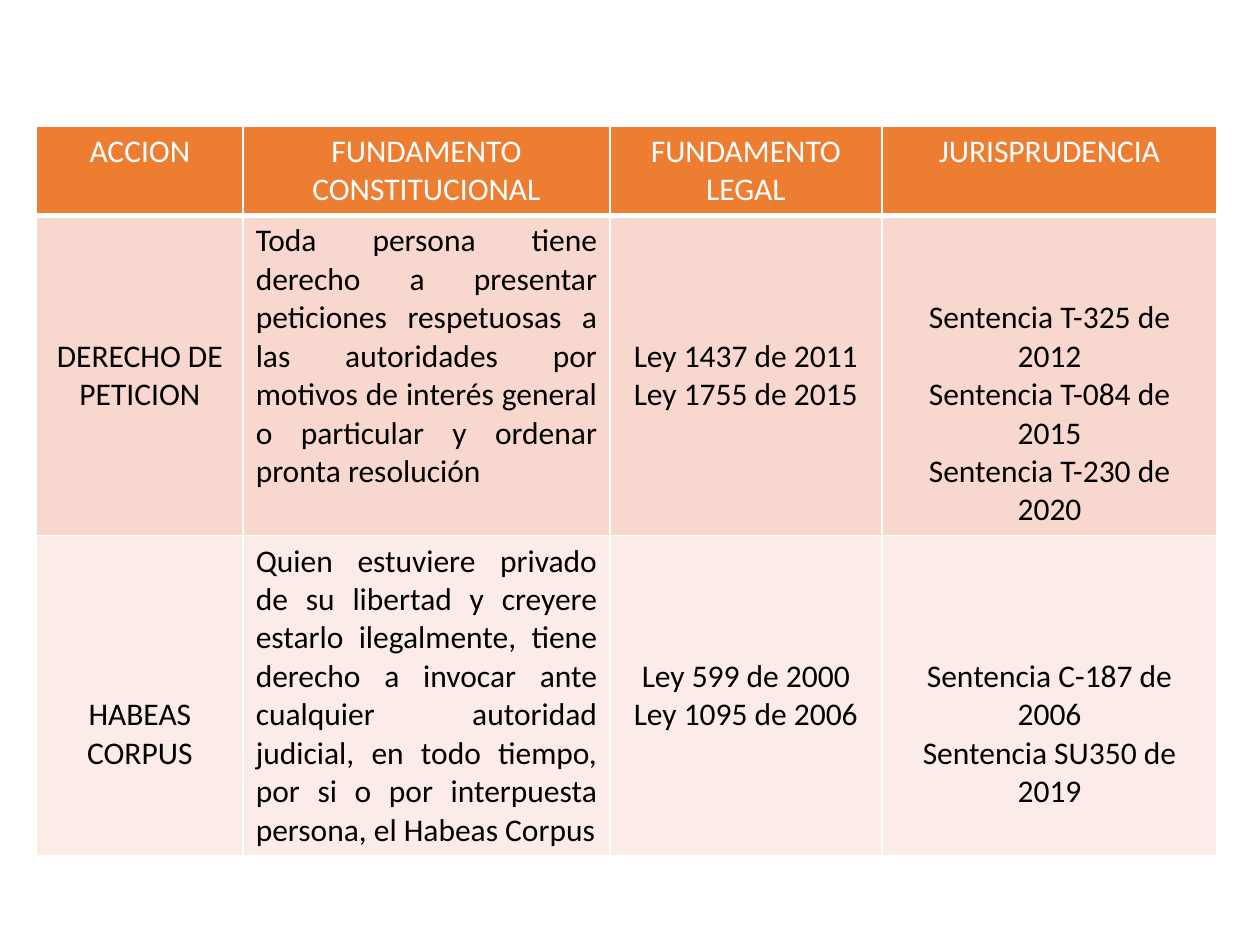
from lxml.etree import SubElement
from pptx import Presentation
from pptx.dml.color import RGBColor
from pptx.enum.text import MSO_ANCHOR, PP_ALIGN
from pptx.oxml.ns import qn
from pptx.util import Inches, Pt

THEME = {
    "font": "Calibri",
    "size": 18,
    "border": "FFFFFF",
    "header_text": "FFFFFF",
    "body_text": "000000",
    "row_fills": ["ED7D31", "F8D7CE", "FCECE8"],
}
SLIDE_SIZE = (10, 7.5)
TABLE_ORIGIN = (0.29, 1)
COLUMN_WIDTHS = [1.64, 2.91, 2.16, 2.66]
ROW_LINES = [2, 8, 8]
LINE_HEIGHT = THEME["size"] * 1.22 / 72
CELL_MARGIN = 0.05
THIN, THICK = 1, 3
JUSTIFIED_COLUMN = 1

ROWS = [
    [
        ["ACCION"],
        ["FUNDAMENTO CONSTITUCIONAL"],
        ["FUNDAMENTO LEGAL"],
        ["JURISPRUDENCIA"],
    ],
    [
        ["DERECHO DE PETICION"],
        ["Toda persona tiene derecho a presentar peticiones respetuosas a las "
         "autoridades por motivos de interés general o particular y ordenar "
         "pronta resolución"],
        ["Ley 1437 de 2011", "Ley 1755 de 2015"],
        ["Sentencia T-325 de 2012", "Sentencia T-084 de 2015", "Sentencia T-230 de 2020"],
    ],
    [
        ["HABEAS CORPUS"],
        ["Quien estuviere privado de su libertad y creyere estarlo ilegalmente, "
         "tiene derecho a invocar ante cualquier autoridad judicial, en todo "
         "tiempo, por si o por interpuesta persona, el Habeas Corpus"],
        ["Ley 599 de 2000", "Ley 1095 de 2006"],
        ["Sentencia C-187 de 2006", "Sentencia SU350 de 2019"],
    ],
]
LINES_ABOVE = [[0, 0, 0, 0], [3, 0, 3, 2], [4, 0, 3, 3]]


def draw_borders(cell, row_index):
    widths = {
        "a:lnL": THIN,
        "a:lnR": THIN,
        "a:lnT": THICK if row_index == 1 else THIN,
        "a:lnB": THICK if row_index == 0 else THIN,
    }
    properties = cell._tc.get_or_add_tcPr()
    for tag, width in widths.items():
        line = SubElement(properties, qn(tag), w=str(Pt(width)))
        fill = SubElement(line, qn("a:solidFill"))
        SubElement(fill, qn("a:srgbClr"), val=THEME["border"])


def fill_cell(cell, lines, row_index, column_index):
    is_header = row_index == 0
    draw_borders(cell, row_index)
    cell.fill.solid()
    cell.fill.fore_color.rgb = RGBColor.from_string(THEME["row_fills"][row_index])
    cell.vertical_anchor = MSO_ANCHOR.TOP
    lines_above = LINES_ABOVE[row_index][column_index]
    cell.margin_top = Inches(CELL_MARGIN + lines_above * LINE_HEIGHT)
    cell.text = "\n".join(lines)
    justified = column_index == JUSTIFIED_COLUMN and not is_header
    color = THEME["header_text" if is_header else "body_text"]
    for paragraph in cell.text_frame.paragraphs:
        paragraph.alignment = PP_ALIGN.JUSTIFY if justified else PP_ALIGN.CENTER
        paragraph.font.name = THEME["font"]
        paragraph.font.size = Pt(THEME["size"])
        paragraph.font.bold = False
        paragraph.font.color.rgb = RGBColor.from_string(color)


def main():
    deck = Presentation()
    deck.slide_width, deck.slide_height = map(Inches, SLIDE_SIZE)
    page = deck.slides.add_slide(deck.slide_layouts[6])
    heights = [count * LINE_HEIGHT + 2 * CELL_MARGIN for count in ROW_LINES]
    left, top = TABLE_ORIGIN
    table = page.shapes.add_table(
        len(ROWS), len(COLUMN_WIDTHS), Inches(left), Inches(top),
        Inches(sum(COLUMN_WIDTHS)), Inches(sum(heights)),
    ).table
    for column, width in zip(table.columns, COLUMN_WIDTHS):
        column.width = Inches(width)
    for row_index, (row, height) in enumerate(zip(table.rows, heights)):
        row.height = Inches(height)
        for column_index, lines in enumerate(ROWS[row_index]):
            fill_cell(row.cells[column_index], lines, row_index, column_index)
    deck.save("out.pptx")


if __name__ == "__main__":
    main()
